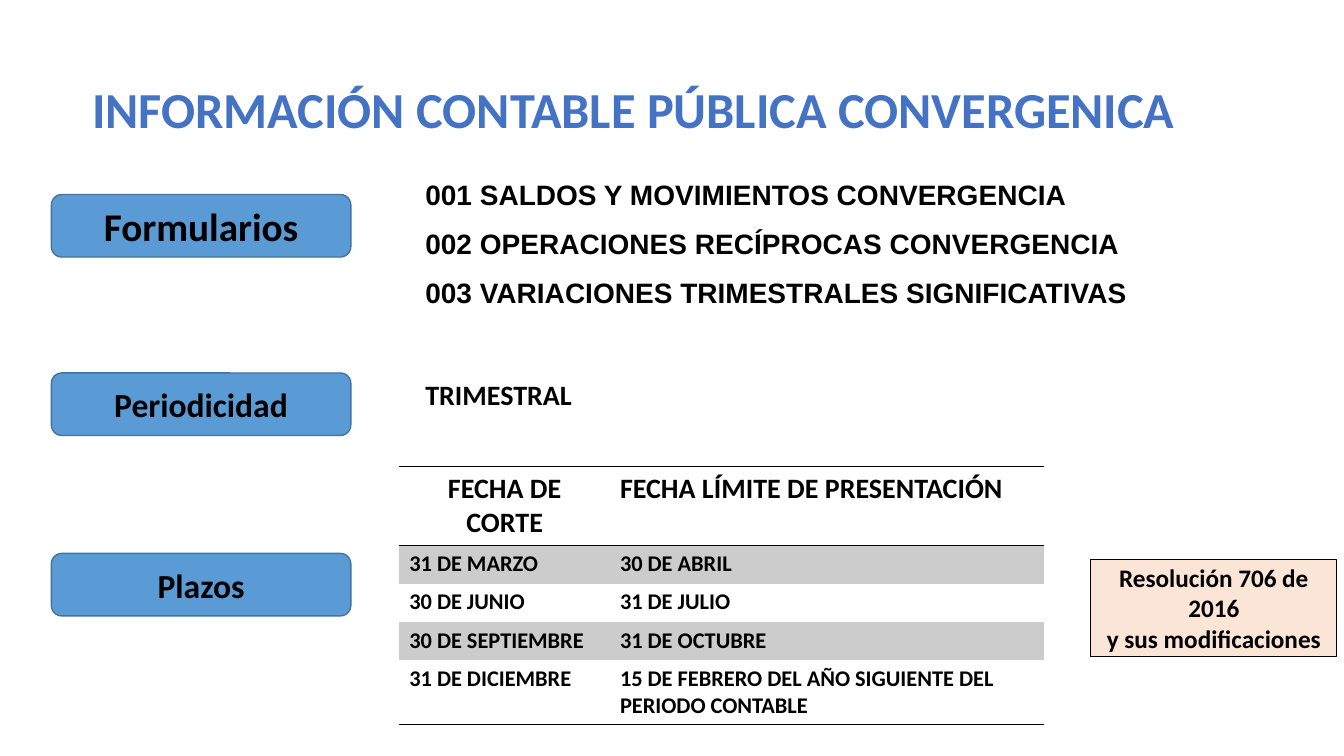
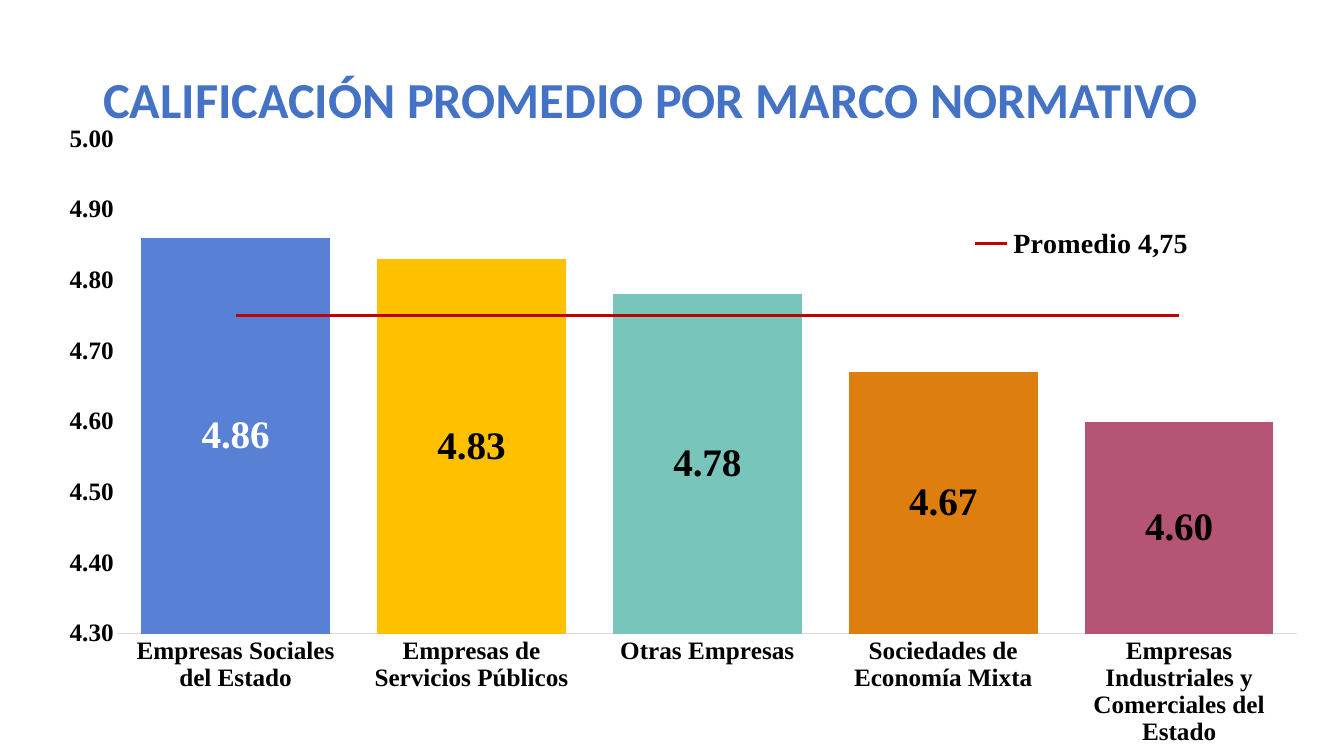
from dataclasses import dataclass

from lxml.etree import SubElement
from pptx import Presentation
from pptx.chart.data import CategoryChartData
from pptx.dml.color import RGBColor
from pptx.enum.chart import XL_CHART_TYPE, XL_LABEL_POSITION, XL_LEGEND_POSITION, XL_MARKER_STYLE, XL_TICK_MARK
from pptx.enum.shapes import MSO_SHAPE
from pptx.enum.text import MSO_ANCHOR, PP_ALIGN
from pptx.oxml import parse_xml
from pptx.oxml.ns import nsdecls, qn
from pptx.util import Inches, Pt


@dataclass(frozen=True)
class Theme:
    body_font: str = "Calibri"
    list_font: str = "Arial"
    chart_font: str = "Times New Roman"
    ink: str = "000000"
    paper: str = "FFFFFF"
    title: str = "4472C4"
    label_fill: str = "5B9BD5"
    label_line: str = "43739E"
    note_fill: str = "FBE5D6"
    band: str = "CCCCCC"
    axis_line: str = "D9D9D9"
    average: str = "C00000"
    bars: tuple = ("5881D5", "FFC000", "78C6BB", "DD7E0E", "B55475")
    title_size: int = 36
    large_size: int = 28
    label_size: int = 24
    body_size: int = 20
    small_size: int = 18
    cell_size: int = 16


THEME = Theme()
NO_TABLE_STYLE = "{2D5ABB26-0587-4C30-8999-92F81FD0307C}"


def rgb(color):
    return RGBColor.from_string(color)


def set_font(font, size, color=THEME.ink, name=THEME.body_font):
    font.name = name
    font.size = Pt(size)
    font.bold = True
    font.color.rgb = rgb(color)


def write(frame, text, size=THEME.body_size, color=THEME.ink, name=THEME.body_font,
          align=PP_ALIGN.LEFT, anchor=MSO_ANCHOR.TOP, line_spacing=1.0, space_before=0):
    frame.word_wrap = True
    frame.vertical_anchor = anchor
    for index, line in enumerate(text.split("\n")):
        para = frame.add_paragraph() if index else frame.paragraphs[0]
        para.alignment = align
        para.line_spacing = line_spacing
        if index:
            para.space_before = Pt(space_before)
        span = para.add_run()
        span.text = line
        set_font(span.font, size, color, name)


def manual_layout(left, top, width, height, inner=False):
    target = '<c:layoutTarget val="inner"/>' if inner else ""
    return parse_xml(
        f'<c:layout {nsdecls("c")}><c:manualLayout>{target}'
        '<c:xMode val="edge"/><c:yMode val="edge"/>'
        f'<c:x val="{left}"/><c:y val="{top}"/><c:w val="{width}"/><c:h val="{height}"/>'
        '</c:manualLayout></c:layout>')


def remove_layout(element):
    for layout in element.findall(qn("c:layout")):
        element.remove(layout)


def draw_last_series_as_line(chart):
    bars = chart.plots[0]._element
    series = bars.findall(qn("c:ser"))[-1]
    lines = parse_xml(
        f'<c:lineChart {nsdecls("c")}><c:grouping val="standard"/><c:varyColors val="0"/>'
        '<c:marker val="1"/></c:lineChart>')
    for inverted in series.findall(qn("c:invertIfNegative")):
        series.remove(inverted)
    lines.insert(2, series)
    for axis in bars.findall(qn("c:axId")):
        SubElement(lines, qn("c:axId")).set("val", axis.get("val"))
    bars.addnext(lines)


class SlideWriter:
    def __init__(self, deck, theme):
        self.deck = deck
        self.theme = theme
        self.slide = None

    def new_slide(self):
        self.slide = self.deck.slides.add_slide(self.deck.slide_layouts[6])

    def text(self, left, top, width, height, text, **style):
        box = self.slide.shapes.add_textbox(Inches(left), Inches(top), Inches(width), Inches(height))
        write(box.text_frame, text, **style)

    def title(self, left, top, width, height, text, line_spacing=1.0):
        self.text(left, top, width, height, text, size=self.theme.title_size,
                  color=self.theme.title, align=PP_ALIGN.CENTER, line_spacing=line_spacing)

    def panel(self, kind, left, top, width, height, text, size, fill, line, line_width):
        shape = self.slide.shapes.add_shape(
            kind, Inches(left), Inches(top), Inches(width), Inches(height))
        shape.shadow.inherit = False
        shape.fill.solid()
        shape.fill.fore_color.rgb = rgb(fill)
        shape.line.color.rgb = rgb(line)
        shape.line.width = Pt(line_width)
        write(shape.text_frame, text, size=size, align=PP_ALIGN.CENTER, anchor=MSO_ANCHOR.MIDDLE)

    def label(self, top, text, size):
        self.panel(MSO_SHAPE.ROUNDED_RECTANGLE, 0.51, top, 2.97, 0.62, text, size,
                   self.theme.label_fill, self.theme.label_line, 1)

    def note(self, left, top, width, height, text):
        self.panel(MSO_SHAPE.RECTANGLE, left, top, width, height, text, self.theme.small_size,
                   self.theme.note_fill, self.theme.ink, 0.75)

    def rule(self, cell, side):
        cell._tc.get_or_add_tcPr().append(parse_xml(
            f'<a:{side} {nsdecls("a")} w="12700"><a:solidFill>'
            f'<a:srgbClr val="{self.theme.ink}"/></a:solidFill></a:{side}>'))

    def table(self, left, top, widths, heights, rows):
        frame = self.slide.shapes.add_table(
            len(rows), len(widths), Inches(left), Inches(top),
            Inches(sum(widths)), Inches(sum(heights)))
        table = frame.table
        table.first_row = table.horz_banding = False
        table._tbl.tblPr.find(qn("a:tableStyleId")).text = NO_TABLE_STYLE
        for column, width in zip(table.columns, widths):
            column.width = Inches(width)
        for row_index, (row, height, values) in enumerate(zip(table.rows, heights, rows)):
            row.height = Inches(height)
            header = row_index == 0
            for column_index, (cell, value) in enumerate(zip(row.cells, values)):
                centered = header and column_index == 0
                write(cell.text_frame, value,
                      size=self.theme.body_size if header else self.theme.cell_size,
                      align=PP_ALIGN.CENTER if centered else PP_ALIGN.LEFT)
                if header:
                    self.rule(cell, "lnT")
                if header or row_index == len(rows) - 1:
                    self.rule(cell, "lnB")
                if row_index % 2:
                    cell.fill.solid()
                    cell.fill.fore_color.rgb = rgb(self.theme.band)
                else:
                    cell.fill.background()

    def rating_chart(self, left, top, width, height, ratings, average_name, average):
        theme = self.theme
        data = CategoryChartData(number_format="0.00")
        data.categories = list(ratings)
        data.add_series("Calificación", list(ratings.values()))
        data.add_series(average_name, [average] * len(ratings))
        chart = self.slide.shapes.add_chart(
            XL_CHART_TYPE.COLUMN_CLUSTERED, Inches(left), Inches(top),
            Inches(width), Inches(height), data).chart
        set_font(chart.font, theme.small_size, name=theme.chart_font)
        chart.has_title = False
        draw_last_series_as_line(chart)
        self.style_bars(chart.plots[0])
        self.style_average(chart.plots[1].series[0])
        self.style_axes(chart)
        self.place_legend(chart)
        plot_area = chart.plots[0]._element.getparent()
        remove_layout(plot_area)
        plot_area.insert(0, manual_layout(0.069, 0.049, 0.931, 0.782, inner=True))

    def style_bars(self, plot):
        theme = self.theme
        plot.gap_width = 25
        plot.vary_by_categories = False
        bars = plot.series[0]
        for index, color in enumerate(theme.bars):
            fill = bars.points[index].format.fill
            fill.solid()
            fill.fore_color.rgb = rgb(color)
        labels = bars.data_labels
        labels.show_value = True
        labels.number_format = "0.00"
        labels.number_format_is_linked = False
        labels.position = XL_LABEL_POSITION.CENTER
        set_font(labels.font, theme.large_size, name=theme.chart_font)
        first_label = bars.points[0].data_label
        set_font(first_label.font, theme.large_size, theme.paper, theme.chart_font)
        first_label.position = XL_LABEL_POSITION.CENTER

    def style_average(self, line):
        line.smooth = False
        line.marker.style = XL_MARKER_STYLE.NONE
        line.format.line.color.rgb = rgb(self.theme.average)
        line.format.line.width = Pt(2.25)

    def style_axes(self, chart):
        theme = self.theme
        for axis in (chart.category_axis, chart.value_axis):
            axis.has_major_gridlines = False
            axis.major_tick_mark = axis.minor_tick_mark = XL_TICK_MARK.NONE
            set_font(axis.tick_labels.font, theme.small_size, name=theme.chart_font)
        chart.category_axis.format.line.color.rgb = rgb(theme.axis_line)
        chart.category_axis.format.line.width = Pt(0.75)
        values = chart.value_axis
        values.format.line.fill.background()
        values.minimum_scale, values.maximum_scale, values.major_unit = 4.3, 5, 0.1
        values.tick_labels.number_format = "0.00"
        values.tick_labels.number_format_is_linked = False

    def place_legend(self, chart):
        chart.has_legend = True
        legend = chart.legend
        legend.position = XL_LEGEND_POSITION.BOTTOM
        legend.include_in_layout = False
        set_font(legend.font, self.theme.body_size, name=self.theme.chart_font)
        element = legend._element
        remove_layout(element)
        position = element.find(qn("c:legendPos"))
        position.addnext(manual_layout(0.73, 0.18, 0.2, 0.07))
        position.addnext(parse_xml(
            f'<c:legendEntry {nsdecls("c")}><c:idx val="0"/><c:delete val="1"/></c:legendEntry>'))


def reporting_slide(writer):
    writer.new_slide()
    writer.title(0.74, 0.73, 11.09, 0.71, "INFORMACIÓN CONTABLE PÚBLICA CONVERGENICA")
    writer.text(4.12, 1.66, 8.76, 1.54,
                "001 SALDOS Y MOVIMIENTOS CONVERGENCIA\n"
                "002 OPERACIONES RECÍPROCAS CONVERGENCIA\n"
                "003 VARIACIONES TRIMESTRALES SIGNIFICATIVAS",
                name=THEME.list_font, line_spacing=1.15, space_before=7.5)
    writer.text(4.12, 3.68, 2.14, 0.47, "TRIMESTRAL", anchor=MSO_ANCHOR.MIDDLE)
    for top, text, size in ((1.93, "Formularios", THEME.large_size),
                            (3.7, "Periodicidad", THEME.label_size),
                            (5.49, "Plazos", THEME.label_size)):
        writer.label(top, text, size)
    writer.table(3.96, 4.63, (2.09, 4.3), (0.78, 0.38, 0.38, 0.38, 0.64), (
        ("FECHA DE CORTE", "FECHA LÍMITE DE PRESENTACIÓN"),
        ("31 DE MARZO", "30 DE ABRIL"),
        ("30 DE JUNIO", "31 DE JULIO"),
        ("30 DE SEPTIEMBRE", "31 DE OCTUBRE"),
        ("31 DE DICIEMBRE", "15 DE FEBRERO DEL AÑO SIGUIENTE DEL PERIODO CONTABLE")))
    writer.note(10.82, 5.55, 2.44, 0.96, "Resolución 706 de 2016\ny sus modificaciones")


def rating_slide(writer):
    writer.new_slide()
    writer.title(0, 0.69, 12.91, 0.6, "CALIFICACIÓN PROMEDIO POR MARCO NORMATIVO", line_spacing=0.9)
    writer.rating_chart(0.3, 1.07, 12.57, 6.33, {
        "Empresas Sociales del Estado": 4.86,
        "Empresas de Servicios Públicos": 4.83,
        "Otras Empresas": 4.78,
        "Sociedades de Economía Mixta": 4.67,
        "Empresas Industriales y Comerciales del Estado": 4.6,
    }, "Promedio 4,75", 4.75)


def main():
    deck = Presentation()
    deck.slide_width, deck.slide_height = Inches(13.33), Inches(7.5)
    writer = SlideWriter(deck, THEME)
    reporting_slide(writer)
    rating_slide(writer)
    deck.save("out.pptx")


if __name__ == "__main__":
    main()
